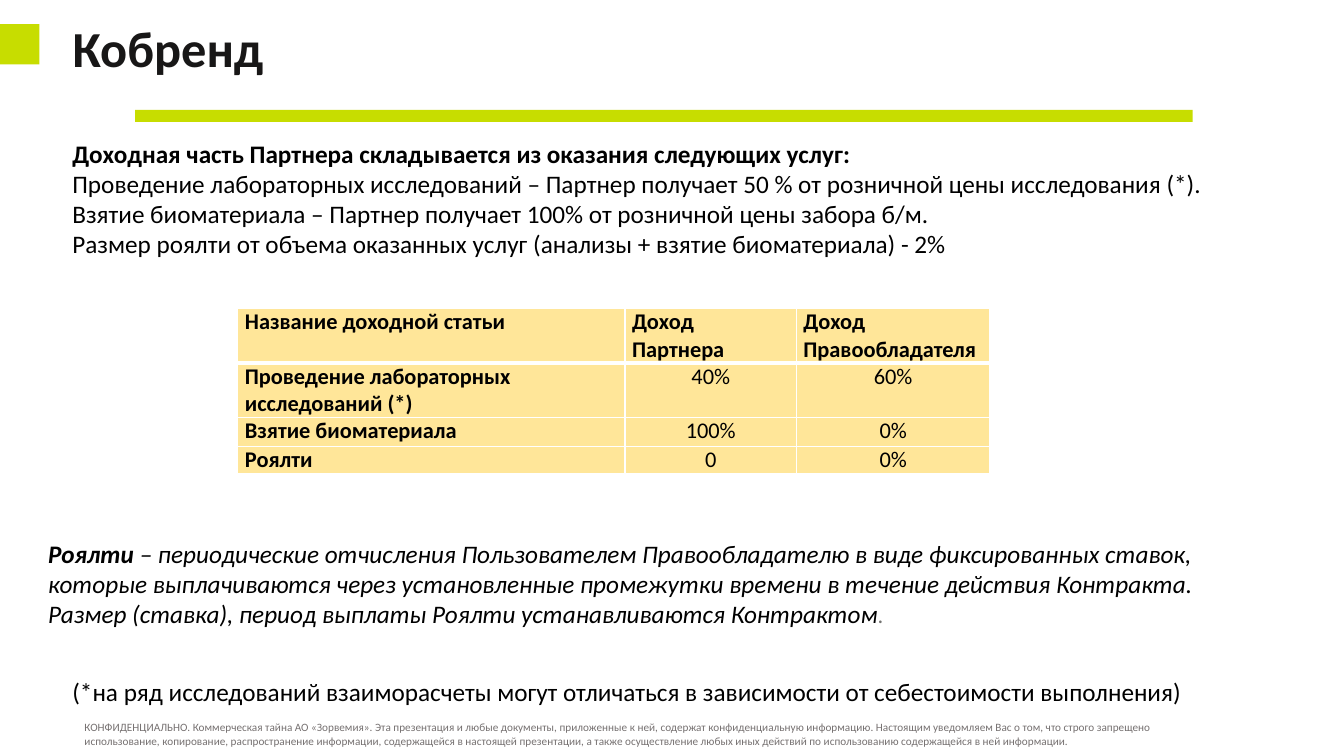
from lxml import etree
from pptx import Presentation
from pptx import util as u
from pptx.dml.color import RGBColor
from pptx.enum import shapes, text
from pptx.oxml.ns import qn

FONT = "Calibri"
LIME, CREAM, WHITE = "C7DD00", "FFE699", "FFFFFF"
BLACK, INK, GREY, FAINT = "000000", "181717", "767171", "737371"
LEFT = 4.65  # shared left edge, percent of the slide's width


def color(value):
    return RGBColor.from_string(value)


def write(para, words, size=18, ink=BLACK, bold=False, italic=False):
    span = para.add_run()
    span.text = words
    font = span.font
    font.name, font.size = FONT, u.Pt(size)
    font.bold, font.italic = bold, italic
    font.color.rgb = color(ink)


class Page:
    """A slide whose lengths are given as percentages of its width and height."""

    def __init__(self, deck):
        self.width, self.height = deck.slide_width, deck.slide_height
        self.slide = deck.slides.add_slide(deck.slide_layouts[5])

    def across(self, share):
        return round(self.width * share / 100)

    def down(self, share):
        return round(self.height * share / 100)

    def area(self, left, top, width, height):
        return self.across(left), self.down(top), self.across(width), self.down(height)

    def fill_frame(self, frame, paragraphs):
        """Write paragraphs, each a list of (words, format) pairs."""
        frame.word_wrap = True
        frame.vertical_anchor = text.MSO_ANCHOR.TOP
        for index, spans in enumerate(paragraphs):
            para = frame.add_paragraph() if index else frame.paragraphs[0]
            para.alignment = text.PP_ALIGN.LEFT
            for words, style in spans:
                write(para, words, **style)

    def title(self, words, *place):
        box = self.slide.shapes.title
        box.left, box.top, box.width, box.height = self.area(*place)
        self.fill_frame(box.text_frame, [[(words, dict(size=36, ink=INK, bold=True))]])
        box.text_frame.auto_size = text.MSO_AUTO_SIZE.NONE

    def text(self, paragraphs, *place):
        box = self.slide.shapes.add_textbox(*self.area(*place))
        self.fill_frame(box.text_frame, paragraphs)

    def block(self, *place):
        bar = self.slide.shapes.add_shape(shapes.MSO_SHAPE.RECTANGLE, *self.area(*place))
        bar.shadow.inherit = False
        bar.fill.solid()
        bar.fill.fore_color.rgb = color(LIME)
        bar.line.fill.background()

    def border(self, cell, side, points):
        line = etree.SubElement(cell._tc.get_or_add_tcPr(), qn(f"a:ln{side}"),
                                w=str(u.Pt(points)))
        fill = etree.SubElement(line, qn("a:solidFill"))
        etree.SubElement(fill, qn("a:srgbClr"), val=WHITE)

    def table(self, rows, left, top, widths, heights):
        place = self.area(left, top, sum(widths), sum(heights))
        grid = self.slide.shapes.add_table(len(rows), len(widths), *place).table
        grid.first_row = grid.horz_banding = False
        for column, width in zip(grid.columns, widths):
            column.width = self.across(width)
        for row, height in zip(grid.rows, heights):
            row.height = self.down(height)
        for r, row in enumerate(rows):
            for c, words in enumerate(row):
                self.cell(grid.cell(r, c), words, r, c)

    def cell(self, cell, words, r, c):
        label = r == 0 or c == 0
        cell.margin_left = cell.margin_right = u.Inches(0.07)
        cell.margin_top = cell.margin_bottom = 0
        for side in "LRTB":
            under_header = (r, side) in ((0, "B"), (1, "T"))
            self.border(cell, side, 3 if under_header else 1)
        cell.fill.solid()
        cell.fill.fore_color.rgb = color(CREAM)
        para = cell.text_frame.paragraphs[0]
        para.alignment = text.PP_ALIGN.LEFT if label else text.PP_ALIGN.CENTER
        write(para, words, size=16, bold=label)


INCOME = [
    [("Доходная часть Партнера складывается из оказания следующих услуг:", dict(bold=True))],
    [("Проведение лабораторных исследований – Партнер получает 50 % "
      "от розничной цены исследования (*).", {})],
    [("Взятие биоматериала – Партнер получает 100% от розничной цены забора б/м.", {})],
    [("Размер роялти от объема оказанных услуг (анализы + взятие биоматериала) - 2%", {})],
]
SHARES = [
    ["Название доходной статьи", "Доход Партнера", "Доход Правообладателя"],
    ["Проведение лабораторных исследований (*)", "40%", "60%"],
    ["Взятие биоматериала", "100%", "0%"],
    ["Роялти", "0", "0%"],
]
ROYALTY = [
    [("Роялти ", dict(bold=True, italic=True)),
     ("– периодические отчисления Пользователем Правообладателю в виде фиксированных "
      "ставок, которые выплачиваются через установленные промежутки времени в течение "
      "действия Контракта.", dict(italic=True))],
    [("Размер (ставка), период выплаты Роялти устанавливаются Контрактом", dict(italic=True)),
     (".", dict(size=16, ink=FAINT, italic=True))],
]
FOOTNOTE = ("(*на ряд исследований взаиморасчеты могут отличаться в зависимости "
            "от себестоимости выполнения)")
CONFIDENTIAL = (
    "КОНФИДЕНЦИАЛЬНО. Коммерческая тайна АО «Зорвемия». Эта презентация и любые документы, "
    "приложенные к ней, содержат конфиденциальную информацию. Настоящим уведомляем Вас о том, "
    "что строго запрещено использование, копирование, распространение информации, содержащейся "
    "в настоящей презентации, а также осуществление любых иных действий по использованию "
    "содержащейся в ней информации.")


def main():
    deck = Presentation()
    deck.slide_width, deck.slide_height = u.Inches(13.33), u.Inches(7.5)
    page = Page(deck)
    page.title("Кобренд", LEFT, 1.6, 70.59, 9.47)
    page.block(0, 3.2, 2.93, 5.33)
    page.block(10.05, 14.53, 78.69, 1.6)
    page.text([[(CONFIDENTIAL, dict(size=8, ink=GREY))]], 5.55, 94.67, 83.2, 4.93)
    page.table(SHARES, 17.7, 40.8, widths=(28.81, 12.75, 14.4), heights=(7.2, 7.2, 3.87, 3.6))
    page.text(INCOME, LEFT, 17.6, 86.65, 17.47)
    page.text([[(FOOTNOTE, {})]], LEFT, 88.8, 89.35, 9.47)
    page.text(ROYALTY, 2.85, 70.53, 93.1, 13.47)
    deck.save("out.pptx")


if __name__ == "__main__":
    main()
